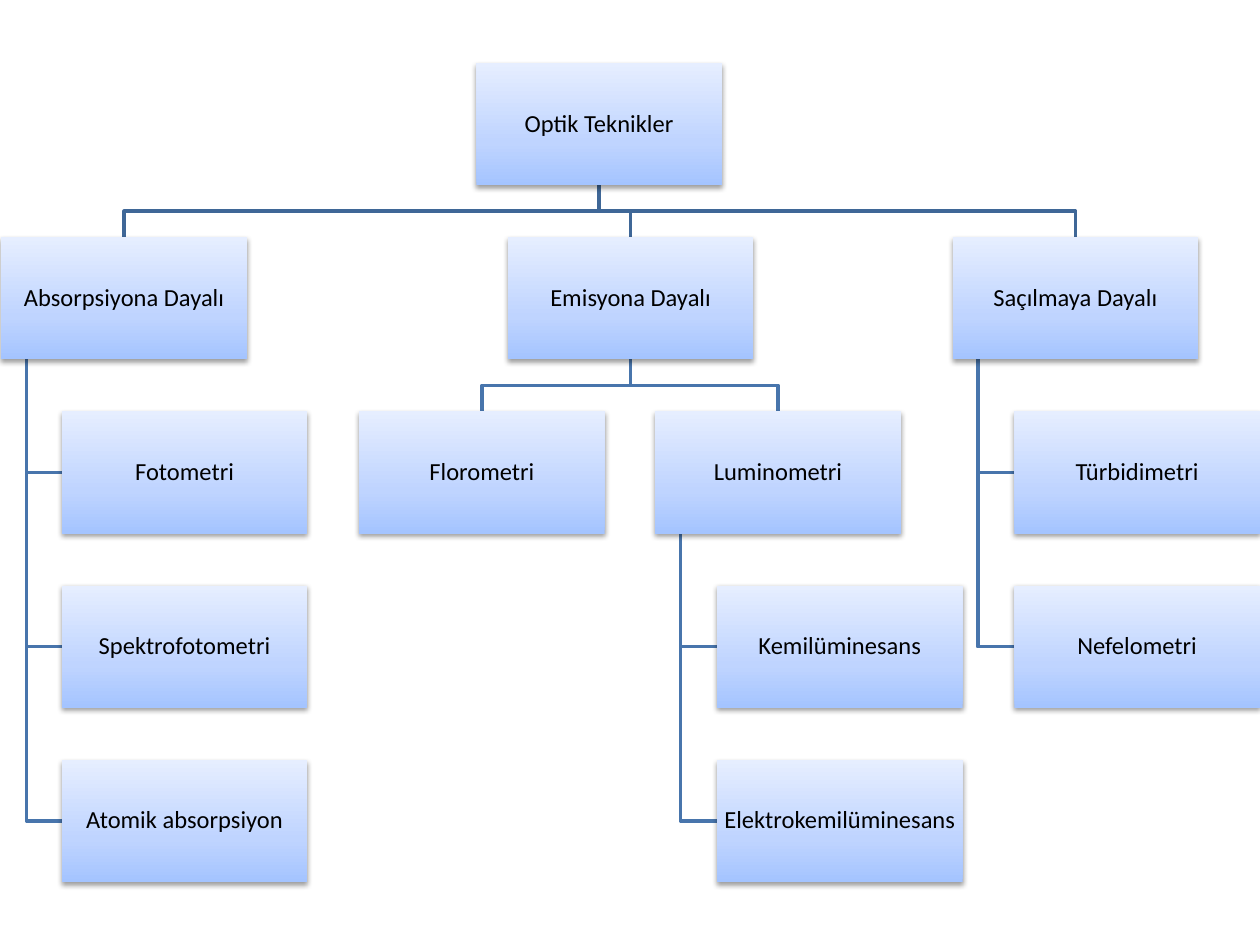
from lxml import etree
from pptx import Presentation
from pptx import util as u
from pptx.dml.color import RGBColor
from pptx.enum import shapes, text
from pptx.oxml import ns

BLACK = RGBColor(0x00, 0x00, 0x00)
TOP_LINE = RGBColor(0x3F, 0x67, 0x97)
LOWER_LINE = RGBColor(0x48, 0x75, 0xAC)
GRADIENT = ((0, RGBColor(0xA4, 0xC4, 0xFF)), (35, RGBColor(0xBF, 0xD4, 0xFF)),
            (100, RGBColor(0xE6, 0xEE, 0xFF)))

WIDTH, HEIGHT = 1.95, 0.97
TOP, PITCH = 0.5, 1.3825
STEM_INSET = 0.2

# label: (left, row)
NODES = {
    "Optik Teknikler": (3.78, 0),
    "Absorpsiyona Dayalı": (0.01, 1),
    "Fotometri": (0.49, 2),
    "Spektrofotometri": (0.49, 3),
    "Atomik absorpsiyon": (0.49, 4),
    "Emisyona Dayalı": (4.03, 1),
    "Florometri": (2.85, 2),
    "Luminometri": (5.2, 2),
    "Kemilüminesans": (5.69, 3),
    "Elektrokemilüminesans": (5.69, 4),
    "Saçılmaya Dayalı": (7.56, 1),
    "Türbidimetri": (8.05, 2),
    "Nefelometri": (8.05, 3),
}
FORKS = {
    "Optik Teknikler": ("Absorpsiyona Dayalı", "Emisyona Dayalı", "Saçılmaya Dayalı"),
    "Emisyona Dayalı": ("Florometri", "Luminometri"),
}
LISTS = {
    "Absorpsiyona Dayalı": ("Fotometri", "Spektrofotometri", "Atomik absorpsiyon"),
    "Luminometri": ("Kemilüminesans", "Elektrokemilüminesans"),
    "Saçılmaya Dayalı": ("Türbidimetri", "Nefelometri"),
}


def write(frame, words, size=14, font="Calibri", color=BLACK):
    frame.word_wrap = True
    frame.vertical_anchor = text.MSO_ANCHOR.MIDDLE
    frame.margin_left = frame.margin_right = u.Inches(0.01)
    frame.margin_top = frame.margin_bottom = u.Inches(0.01)
    para = frame.paragraphs[0]
    para.alignment = text.PP_ALIGN.CENTER
    para.line_spacing = 0.9
    para.space_after = u.Pt(5)
    span = para.add_run()
    span.text = words
    span.font.size = u.Pt(size)
    span.font.name = font
    span.font.color.rgb = color


def place(label):
    left, row = NODES[label]
    return left, TOP + PITCH * row


class Chart:
    """Draws the boxes and branches of a hierarchy on one slide."""

    def __init__(self, page):
        self.page = page

    def branch(self, points, color):
        corners = [(u.Inches(x), u.Inches(y)) for x, y in points]
        builder = self.page.shapes.build_freeform(*corners[0])
        builder.add_line_segments(corners[1:], close=False)
        line = builder.convert_to_shape()
        line.shadow.inherit = False
        line.fill.background()
        line.line.color.rgb = color
        line.line.width = u.Pt(2)

    def fork(self, parent, child, color):
        left, top = place(parent)
        child_left, child_top = place(child)
        start, end = left + WIDTH / 2, child_left + WIDTH / 2
        middle = (top + HEIGHT + child_top) / 2
        self.branch([(start, top + HEIGHT), (start, middle),
                     (end, middle), (end, child_top)], color)

    def list_item(self, parent, child, color):
        left, top = place(parent)
        child_left, child_top = place(child)
        stem, middle = left + STEM_INSET, child_top + HEIGHT / 2
        self.branch([(stem, top + HEIGHT), (stem, middle), (child_left, middle)], color)

    def box(self, label):
        left, top = place(label)
        box = self.page.shapes.add_shape(
            shapes.MSO_SHAPE.RECTANGLE, u.Inches(left), u.Inches(top),
            u.Inches(WIDTH), u.Inches(HEIGHT))
        box.line.fill.background()
        self.gradient(box)
        self.shadow(box)
        write(box.text_frame, label)

    def gradient(self, box):
        box.fill.gradient()
        box.fill.gradient_angle = 90
        stops = box.element.spPr.find(".//" + ns.qn("a:gsLst"))
        for stop in list(stops):
            stops.remove(stop)
        for position, color in GRADIENT:
            stop = etree.SubElement(stops, ns.qn("a:gs"), pos=str(position * 1000))
            etree.SubElement(stop, ns.qn("a:srgbClr"), val=str(color))

    def shadow(self, box):
        box.shadow.inherit = False
        effects = box.element.spPr.find(ns.qn("a:effectLst"))
        shadow = etree.SubElement(
            effects, ns.qn("a:outerShdw"), blurRad=str(u.Pt(3.1)),
            dist=str(u.Pt(1.6)), dir="5400000", rotWithShape="0")
        color = etree.SubElement(shadow, ns.qn("a:srgbClr"), val=str(BLACK))
        etree.SubElement(color, ns.qn("a:alpha"), val="38000")


def main():
    deck = Presentation()
    deck.slide_width, deck.slide_height = u.Inches(10), u.Inches(7.5)
    chart = Chart(deck.slides.add_slide(deck.slide_layouts[6]))
    for parent, children in LISTS.items():
        for child in children:
            chart.list_item(parent, child, LOWER_LINE)
    for parent, children in FORKS.items():
        color = TOP_LINE if NODES[parent][1] == 0 else LOWER_LINE
        for child in children:
            chart.fork(parent, child, color)
    for label in NODES:
        chart.box(label)
    deck.save("out.pptx")


if __name__ == "__main__":
    main()
